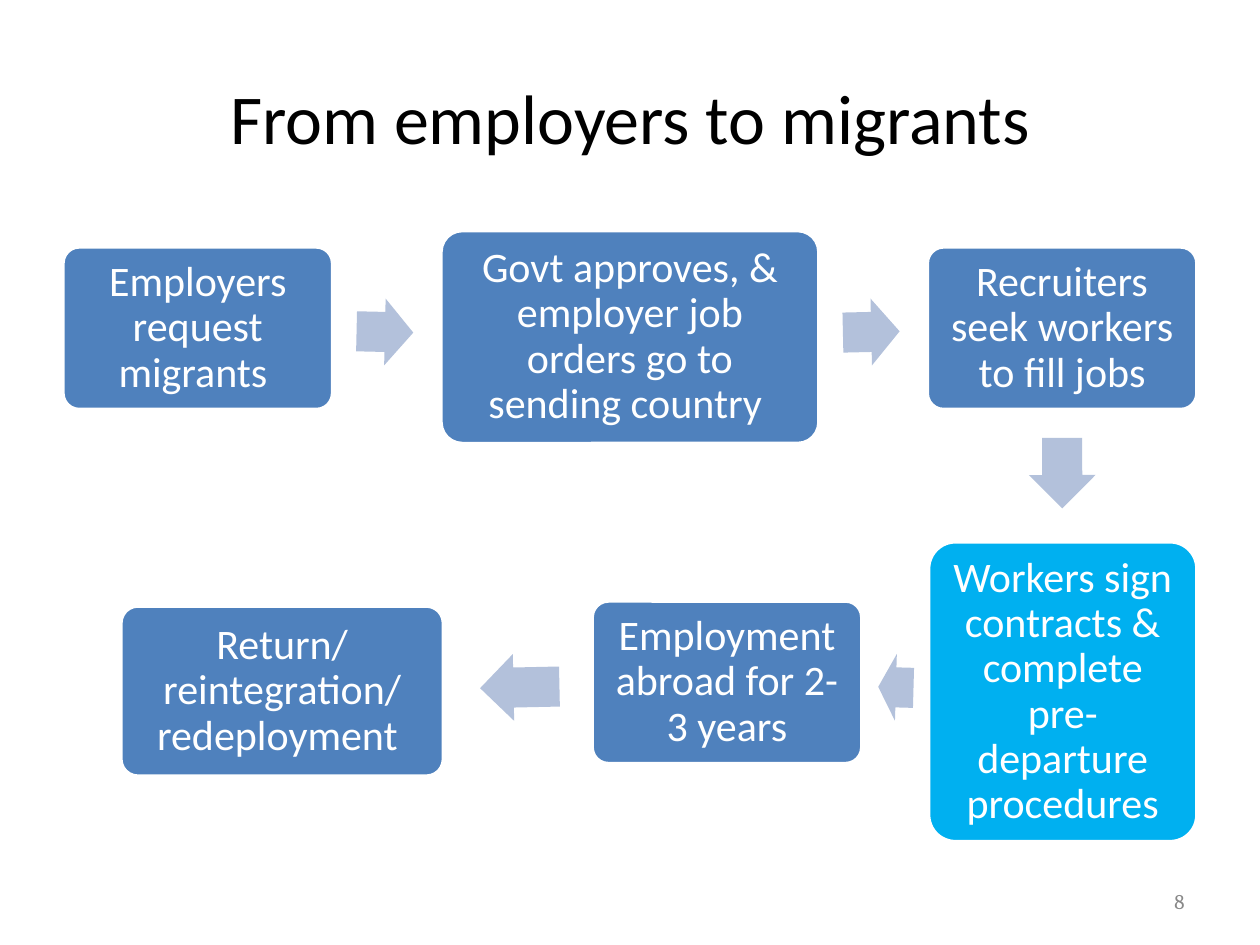
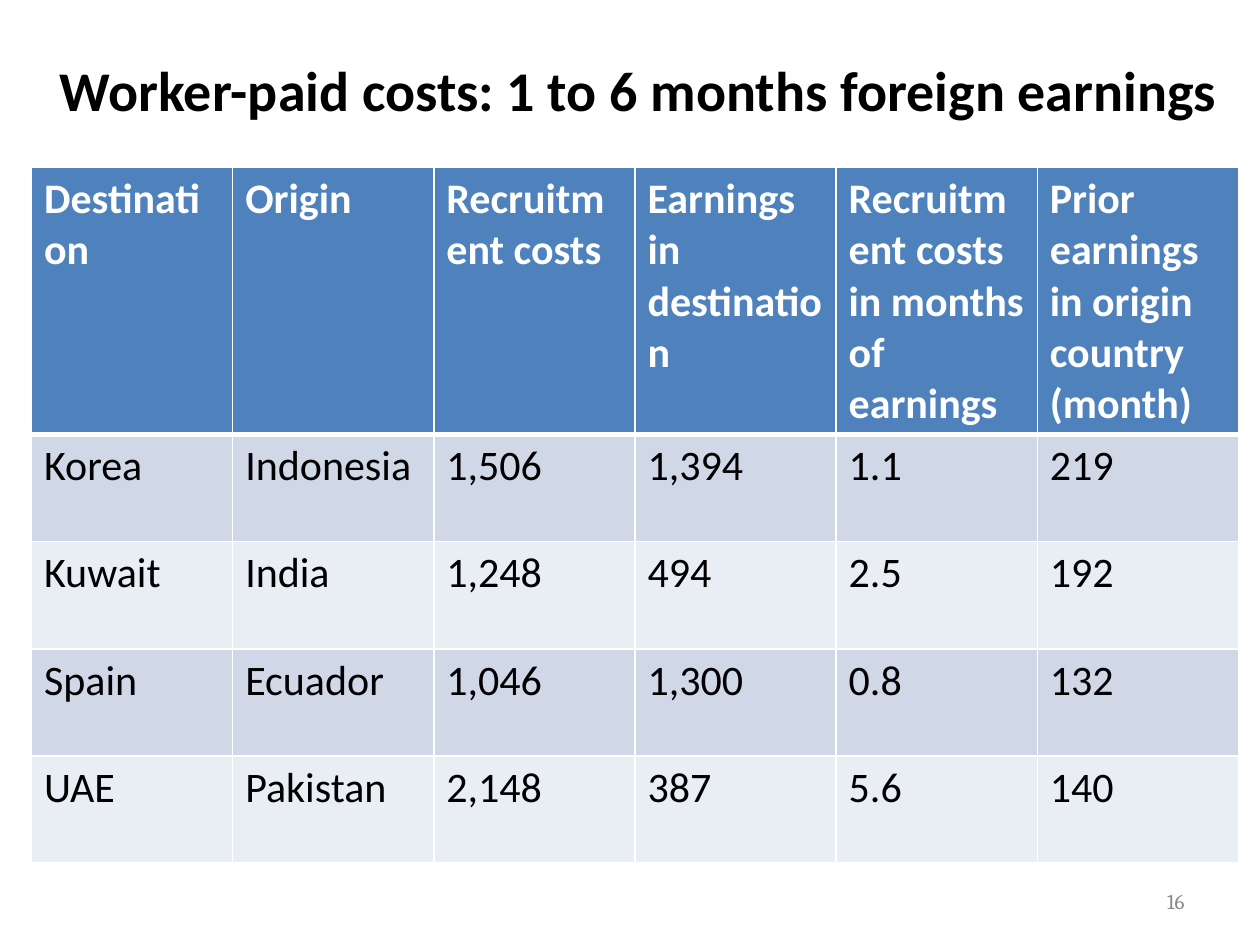
from lxml import etree
from pptx import Presentation
from pptx import util as u
from pptx.dml.color import RGBColor
from pptx.enum import shapes, text
from pptx.oxml import ns

COLORS = {
    "ink": "000000",
    "paper": "FFFFFF",
    "blue": "4F81BD",
    "highlight": "00B0F0",
    "arrow": "B3C1DB",
    "odd_row": "D0D8E8",
    "even_row": "E9EDF4",
    "number": "898989",
}

# text, left, top, width, height, fill
STEPS = [
    ("Employers request migrants ", 0.5, 1.96, 2.14, 1.29, "blue"),
    ("Govt approves, & employer job orders go to sending country ",
     3.5, 1.83, 3, 1.69, "blue"),
    ("Recruiters seek workers to fill jobs", 7.36, 1.96, 2.14, 1.29, "blue"),
    ("Workers sign contracts & complete pre-departure procedures",
     7.37, 4.3, 2.13, 2.38, "highlight"),
    ("Employment abroad for 2-3 years", 4.7, 4.77, 2.14, 1.29, "blue"),
    ("Return/ reintegration/ redeployment ", 0.96, 4.81, 2.56, 1.35, "blue"),
]

# left, top, length, rotation
ARROWS = [
    (2.83, 2.37, 0.45, 1.3),
    (6.69, 2.37, 0.45, 358.7),
    (8.15, 3.49, 0.56, 89.8),
    (6.97, 5.19, 0.28, 181.6),
    (3.81, 5.19, 0.63, 178.8),
]
ARROW_THICKNESS = 0.53

COSTS = [
    ("Destination", "Origin", "Recruitment costs", "Earnings in destination",
     "Recruitment costs in months of earnings",
     "Prior earnings in origin country (month)"),
    ("Korea", "Indonesia", "1,506", "1,394", "1.1", "219"),
    ("Kuwait", "India", "1,248", "494", "2.5", "192"),
    ("Spain", "Ecuador", "1,046", "1,300", "0.8", "132"),
    ("UAE", "Pakistan", "2,148", "387", "5.6", "140"),
]
HEADER_HEIGHT, ROW_HEIGHT = 2.12, 0.85


def rgb(name):
    return RGBColor.from_string(COLORS[name])


class SlideBuilder:
    """Holds the shared style and the slide being built."""

    def __init__(self):
        self.deck = Presentation()
        self.deck.slide_width = u.Inches(10)
        self.deck.slide_height = u.Inches(7.5)
        self.slide = None

    def new_slide(self):
        self.slide = self.deck.slides.add_slide(self.deck.slide_layouts[6])

    def add_words(self, frame, words, size, color="ink", bold=False,
                  align=text.PP_ALIGN.CENTER, font="Calibri"):
        frame.word_wrap = True
        para = frame.paragraphs[0]
        para.alignment = align
        span = para.add_run()
        span.text = words
        span.font.name = font
        span.font.size = u.Pt(size)
        span.font.bold = bold
        span.font.color.rgb = rgb(color)
        return para

    def label(self, words, left, top, width, height, size, **style):
        box = self.slide.shapes.add_textbox(
            *map(u.Inches, (left, top, width, height)))
        box.text_frame.vertical_anchor = text.MSO_ANCHOR.MIDDLE
        self.add_words(box.text_frame, words, size, **style)

    def title(self, words, left, top, width, height, size, bold=False):
        self.label(words, left, top, width, height, size, bold=bold)

    def page_number(self, number):
        self.label(str(number), 7.17, 6.95, 2.33, 0.4, 12, color="number",
                   align=text.PP_ALIGN.RIGHT, font="Cambria")

    def shape(self, kind, left, top, width, height, fill):
        shape = self.slide.shapes.add_shape(
            kind, *map(u.Inches, (left, top, width, height)))
        shape.shadow.inherit = False
        shape.fill.solid()
        shape.fill.fore_color.rgb = rgb(fill)
        return shape

    def step(self, words, left, top, width, height, fill):
        box = self.shape(shapes.MSO_SHAPE.ROUNDED_RECTANGLE,
                         left, top, width, height, fill)
        box.adjustments[0] = 0.1
        box.line.color.rgb = rgb("paper")
        box.line.width = u.Pt(2)
        frame = box.text_frame
        frame.vertical_anchor = text.MSO_ANCHOR.MIDDLE
        frame.margin_left = frame.margin_right = u.Inches(0.1)
        frame.margin_top = frame.margin_bottom = u.Inches(0.1)
        self.add_words(frame, words, 24, "paper").line_spacing = 0.9

    def arrow(self, left, top, length, rotation):
        arrow = self.shape(shapes.MSO_SHAPE.RIGHT_ARROW, left, top, length,
                           ARROW_THICKNESS, "arrow")
        arrow.adjustments[0] = 0.6
        arrow.adjustments[1] = 0.5
        arrow.rotation = rotation
        arrow.line.fill.background()

    def cell_borders(self, cell, top, bottom):
        """Draw white borders, with top and bottom widths in points."""
        properties = cell._tc.get_or_add_tcPr()
        widths = {"lnL": 1, "lnR": 1, "lnT": top, "lnB": bottom}
        for tag, width in widths.items():
            line = etree.SubElement(properties, ns.qn("a:" + tag),
                                    w=str(u.Pt(width)))
            fill = etree.SubElement(line, ns.qn("a:solidFill"))
            etree.SubElement(fill, ns.qn("a:srgbClr"), val=COLORS["paper"])

    def table(self, rows, left, top, width):
        height = HEADER_HEIGHT + ROW_HEIGHT * (len(rows) - 1)
        table = self.slide.shapes.add_table(
            len(rows), len(rows[0]),
            *map(u.Inches, (left, top, width, height))).table
        for column in table.columns:
            column.width = u.Inches(width / len(rows[0]))
        for r, row in enumerate(rows):
            header = r == 0
            table.rows[r].height = u.Inches(
                HEADER_HEIGHT if header else ROW_HEIGHT)
            band = "blue" if header else "odd_row" if r % 2 else "even_row"
            for c, words in enumerate(row):
                cell = table.cell(r, c)
                self.cell_borders(cell, top=3 if r == 1 else 1,
                                  bottom=3 if header else 1)
                cell.fill.solid()
                cell.fill.fore_color.rgb = rgb(band)
                self.add_words(cell.text_frame, words, 24,
                               "paper" if header else "ink", bold=header,
                               align=text.PP_ALIGN.LEFT)


def recruitment_flow(builder):
    builder.new_slide()
    builder.title("From employers to migrants", 0.5, 0.3, 9, 1.25, 40)
    builder.page_number(8)
    for step in STEPS:
        builder.step(*step)
    for arrow in ARROWS:
        builder.arrow(*arrow)


def worker_costs(builder):
    builder.new_slide()
    builder.page_number(16)
    builder.table(COSTS, 0.25, 1.33, 9.58)
    builder.title("Worker-paid costs: 1 to 6 months foreign earnings",
                  0.14, 0.17, 9.86, 1.08, 32, bold=True)


def main():
    builder = SlideBuilder()
    recruitment_flow(builder)
    worker_costs(builder)
    builder.deck.save("out.pptx")


if __name__ == "__main__":
    main()
